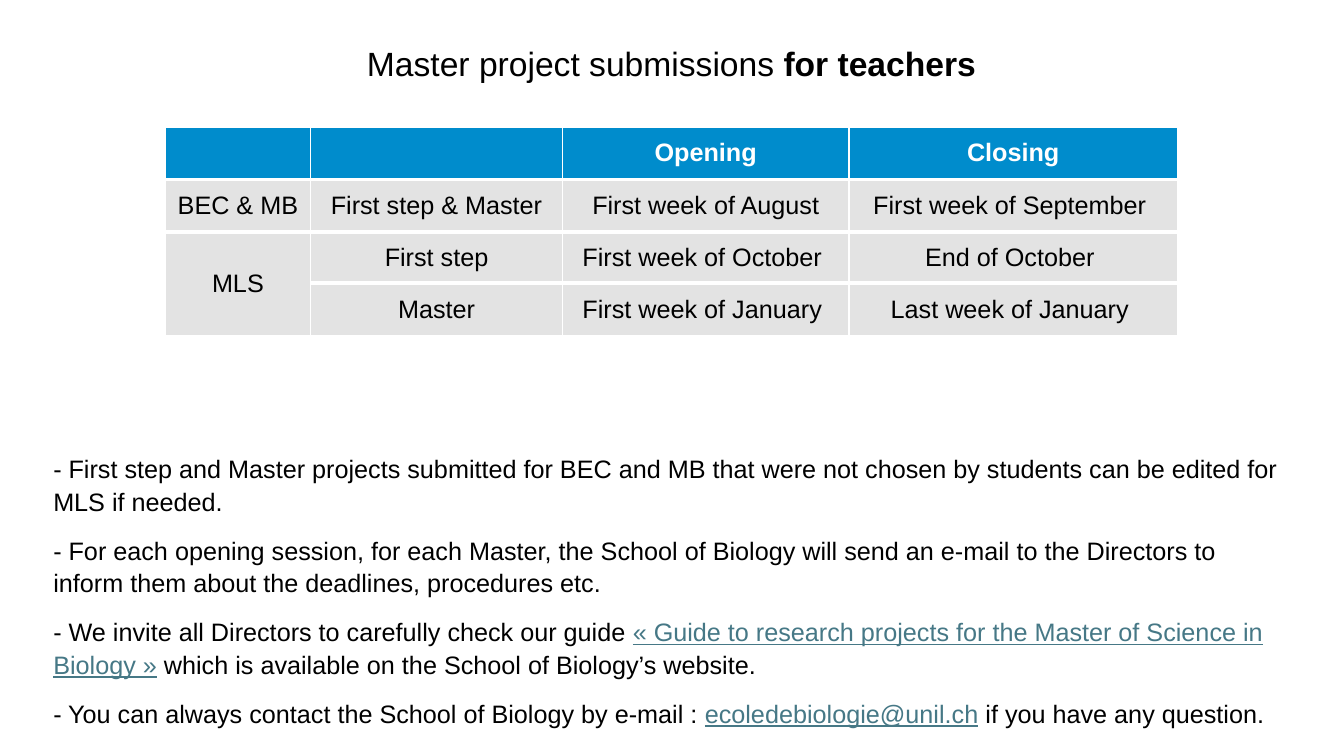
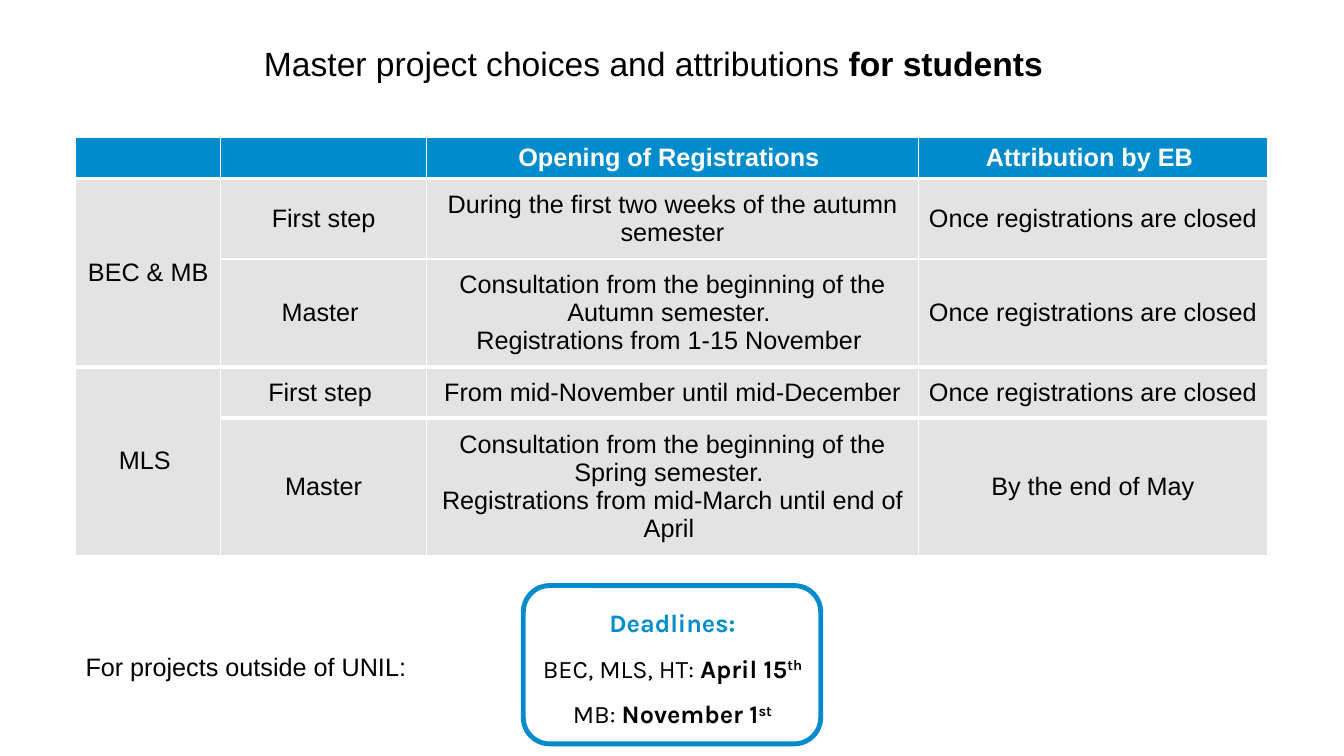
from lxml import etree
from pptx import Presentation
from pptx.dml.color import RGBColor
from pptx.enum.shapes import MSO_SHAPE as Shape
from pptx.enum.text import MSO_ANCHOR as Anchor, PP_ALIGN as Align
from pptx.oxml.ns import qn
from pptx.util import Emu, Pt

# Shared look: lengths are px, 100 to the inch
EMU_PER_PX = 9144
BLUE, GREY, LINK = "008CCC", "E3E3E3", "467886"
BLACK, WHITE = "000000", "FFFFFF"
BODY_FONT, CARD_FONT = "Arial", "Karla"
TITLE_SIZE, BODY_SIZE = 24, 18
BODY_SPACING, CARD_SPACING = 1.07, 1.5
THIN, THICK = 1, 3
CELL_INSET_Y = 5

BOLD = {"bold": True}
LINKED = {"color": LINK, "underline": True}
RAISED = {"bold": True, "baseline": 30000}

# Content: a paragraph is a list of (text, style) runs
TEACHERS_TITLE = [("Master project submissions ", {}), ("for teachers", BOLD)]
STUDENTS_TITLE = [("Master project choices and attributions ", {}),
                  ("for students", BOLD)]

TEACHERS_TABLE = {
    "left": 164, "top": 126, "inset_x": 0,
    "columns": [144, 250, 284, 326],
    "heights": [52, 52, 51, 52],
    "thick_below": {0, 1, 2},
    "merges": [(2, 3)],
    "rows": [
        ["", "", "Opening", "Closing"],
        ["BEC & MB", "First step & Master", "First week of August",
         "First week of September "],
        ["MLS", "First step", "First week of October ", "End of October "],
        ["", "Master", "First week of January ", "Last week of January "],
    ],
}
STUDENTS_TABLE = {
    "left": 75, "top": 136, "inset_x": 9,
    "columns": [144, 204, 488, 346],
    "heights": [41, 80, 107, 51, 136],
    "thick_below": {0, 2, 3},
    "merges": [(1, 2), (3, 4)],
    "rows": [
        ["", "", "Opening of Registrations ", "Attribution by EB "],
        ["BEC & MB", "First step",
         "During the first two weeks of the autumn semester",
         "Once registrations are closed "],
        ["", "Master ",
         "Consultation from the beginning of the Autumn semester. \n"
         "Registrations from 1-15 November ",
         "Once registrations are closed"],
        ["MLS ", "First step ", "From mid-November until mid-December",
         "Once registrations are closed"],
        ["", "Master",
         "Consultation from the beginning of the Spring semester. \n"
         "Registrations from mid-March until end of April ",
         "By the end of May"],
    ],
}
TEACHERS_NOTES = [
    [("- First step and Master projects submitted for BEC and MB that were not "
      "chosen by students can be edited for MLS if needed.", {})],
    [("- For each opening session, for each Master, the School of Biology will "
      "send an e-mail to the Directors to inform them about the deadlines, "
      "procedures etc.", {})],
    [("- We invite all Directors to carefully check our guide ", {}),
     ("« Guide to research projects for the Master of Science in Biology »",
      LINKED),
     (" which is available on the School of Biology’s website.", {})],
    [("- You can always contact the School of Biology by e-mail : ", {}),
     ("ecoledebiologie@unil.ch", LINKED),
     (" if you have any question.", {})],
]
OUTSIDE_NOTE = [[("For projects outside of UNIL:", {})]]
DEADLINES = [
    [("Deadlines:", {"bold": True, "color": BLUE})],
    [("BEC, MLS, HT: ", {}), ("April 15", BOLD), ("th", RAISED)],
    [("MB: ", {}), ("November 1", BOLD), ("st", RAISED)],
]


def px(length):
    return Emu(length * EMU_PER_PX)


def rgb(code):
    return RGBColor.from_string(code)


def add_runs(para, runs, size=BODY_SIZE, font=BODY_FONT):
    for text, style in runs:
        span = para.add_run()
        span.text = text
        span.font.name = font
        span.font.size = Pt(size)
        span.font.bold = style.get("bold", False)
        span.font.underline = style.get("underline", False)
        span.font.color.rgb = rgb(style.get("color", BLACK))
        if "baseline" in style:
            span.font._element.set("baseline", str(style["baseline"]))


def fill_frame(frame, paragraphs, align, spacing=None, after=0, **look):
    for index, runs in enumerate(paragraphs):
        para = frame.add_paragraph() if index else frame.paragraphs[0]
        para.alignment = align
        para.space_after = Pt(after)
        if spacing:
            para.line_spacing = spacing
        add_runs(para, runs, **look)


def add_text(page, area, paragraphs, align=Align.LEFT, wrap=True,
             spacing=BODY_SPACING, **look):
    box = page.shapes.add_textbox(*map(px, area))
    box.text_frame.word_wrap = wrap
    fill_frame(box.text_frame, paragraphs, align, spacing, **look)


def add_title(page, left, width, runs, **layout):
    add_text(page, (left, 35, width, 50), [runs], size=TITLE_SIZE, **layout)


def set_borders(cell, top, bottom):
    props = cell._tc.get_or_add_tcPr()
    edges = [("a:lnL", THIN), ("a:lnR", THIN), ("a:lnT", top), ("a:lnB", bottom)]
    # Borders stand before the fill in the cell properties
    for index, (tag, width) in enumerate(edges):
        line = etree.Element(qn(tag), w=str(Pt(width)))
        paint = etree.SubElement(line, qn("a:solidFill"))
        etree.SubElement(paint, qn("a:srgbClr"), val=WHITE)
        props.insert(index, line)


def add_schedule(page, data):
    rows, columns, heights = data["rows"], data["columns"], data["heights"]
    area = (data["left"], data["top"], sum(columns), sum(heights))
    table = page.shapes.add_table(len(rows), len(columns),
                                  *map(px, area)).table
    table.horz_banding = False
    for column, width in zip(table.columns, columns):
        column.width = px(width)
    for row, height in zip(table.rows, heights):
        row.height = px(height)
    for first, last in data["merges"]:
        table.cell(first, 0).merge(table.cell(last, 0))

    def edge_below(row):
        return THICK if row in data["thick_below"] else THIN

    for r, texts in enumerate(rows):
        header = r == 0
        style = {"bold": True, "color": WHITE} if header else {}
        for c, text in enumerate(texts):
            cell = table.cell(r, c)
            cell.fill.solid()
            cell.fill.fore_color.rgb = rgb(BLUE if header else GREY)
            if cell.is_spanned:
                continue
            cell.vertical_anchor = Anchor.MIDDLE
            cell.margin_left = cell.margin_right = px(data["inset_x"])
            cell.margin_top = cell.margin_bottom = px(CELL_INSET_Y)
            last = r + cell.span_height - 1 if cell.is_merge_origin else r
            set_borders(cell, edge_below(r - 1), edge_below(last))
            if text:
                lines = [[(line, style)] for line in text.split("\n")]
                fill_frame(cell.text_frame, lines, Align.CENTER)


def add_deadline_card(page):
    card = page.shapes.add_shape(Shape.ROUNDED_RECTANGLE,
                                 *map(px, (519, 581, 295, 157)))
    card.shadow.inherit = False
    card.fill.background()
    card.line.color.rgb = rgb(BLUE)
    card.line.width = Pt(3.5)
    add_text(page, (527, 583, 280, 142), DEADLINES, Align.CENTER, wrap=False,
             spacing=CARD_SPACING, font=CARD_FONT)


def main():
    deck = Presentation()
    deck.slide_width, deck.slide_height = px(1333), px(750)
    blank = deck.slide_layouts[6]

    # Slide 1: submissions by teachers
    page = deck.slides.add_slide(blank)
    add_schedule(page, TEACHERS_TABLE)
    add_text(page, (43, 443, 1248, 273), TEACHERS_NOTES, after=12)
    add_title(page, 351, 630, TEACHERS_TITLE, align=Align.CENTER, wrap=False)

    # Slide 2: choices by students
    page = deck.slides.add_slide(blank)
    add_schedule(page, STUDENTS_TABLE)
    add_title(page, 252, 830, STUDENTS_TITLE)
    add_text(page, (75, 639, 397, 40), OUTSIDE_NOTE)
    add_deadline_card(page)

    deck.save("out.pptx")


if __name__ == "__main__":
    main()
